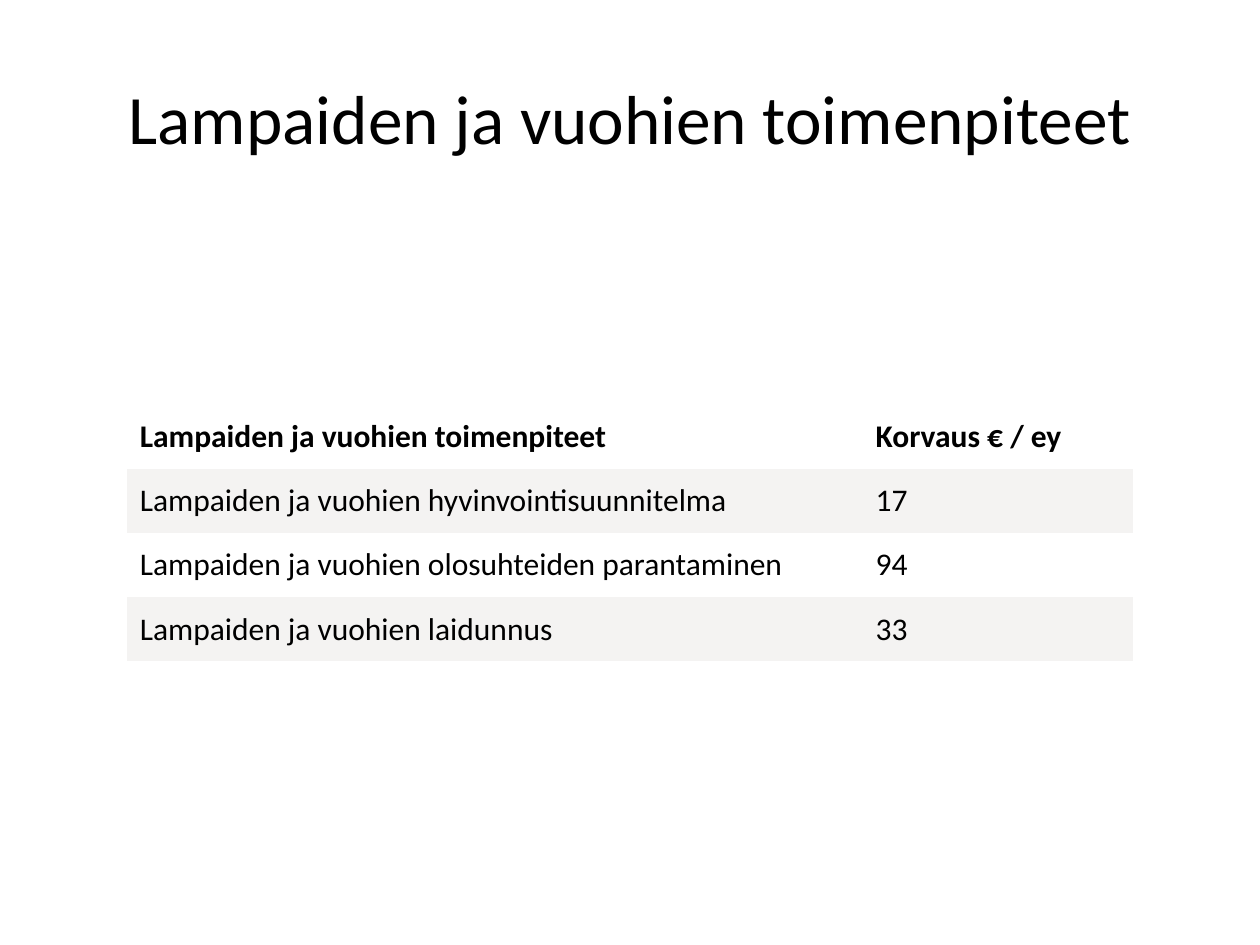
from pptx import Presentation
from pptx.dml.color import RGBColor
from pptx.enum.text import MSO_ANCHOR, PP_ALIGN
from pptx.oxml.ns import qn
from pptx.util import Inches, Pt

MIDDLE, CENTER = MSO_ANCHOR.MIDDLE, PP_ALIGN.CENTER
PLAIN = "{2D5ABB26-0587-4C30-8999-92F81FD0307C}"  # no style, no grid
BANDS = ["FFFFFF", "F4F3F2"]
TITLE = "Lampaiden ja vuohien toimenpiteet"
ROWS = [
    (TITLE, "Korvaus € / ey"),
    ("Lampaiden ja vuohien hyvinvointisuunnitelma", "17"),
    ("Lampaiden ja vuohien olosuhteiden parantaminen", "94"),
    ("Lampaiden ja vuohien laidunnus\u00a0", "33"),
]
COLS = [5.84, 2.14]
ROW = 0.51


def color(code):
    return RGBColor.from_string(code)


def write(para, text, size, bold=False):
    run = para.add_run()
    run.text = text
    run.font.name = "Calibri"
    run.font.size = Pt(size)
    run.font.bold = bold
    run.font.color.rgb = color("000000")


deck = Presentation()
deck.slide_width, deck.slide_height = Inches(10), Inches(7.5)
wide, high = deck.slide_width, deck.slide_height
slide = deck.slides.add_slide(deck.slide_layouts[6])

# Title
box = slide.shapes.add_textbox(int(wide * 0.05), int(high * 0.04),
                               int(wide * 0.9), Inches(1.25))
frame = box.text_frame
frame.word_wrap = True
frame.vertical_anchor = MIDDLE
frame.paragraphs[0].alignment = CENTER
write(frame.paragraphs[0], TITLE, 39.6)

# Table, centred across the slide
span = Inches(sum(COLS))
holder = slide.shapes.add_table(len(ROWS), len(COLS), (wide - span) // 2,
                                Inches(3.21), span, Inches(ROW * len(ROWS)))
next(holder.element.iter(qn("a:tableStyleId"))).text = PLAIN
table = holder.table
for col, width in zip(table.columns, COLS):
    col.width = Inches(width)

# Cells, with every second row shaded
for r, row in enumerate(ROWS):
    table.rows[r].height = Inches(ROW)
    for c, text in enumerate(row):
        cell = table.cell(r, c)
        cell.fill.solid()
        cell.fill.fore_color.rgb = color(BANDS[r % 2])
        cell.vertical_anchor = MIDDLE
        cell.margin_left = cell.margin_right = Inches(0.1)
        cell.margin_top = cell.margin_bottom = Inches(0.1)
        write(cell.text_frame.paragraphs[0], text, 18, bold=r == 0)

deck.save("out.pptx")
